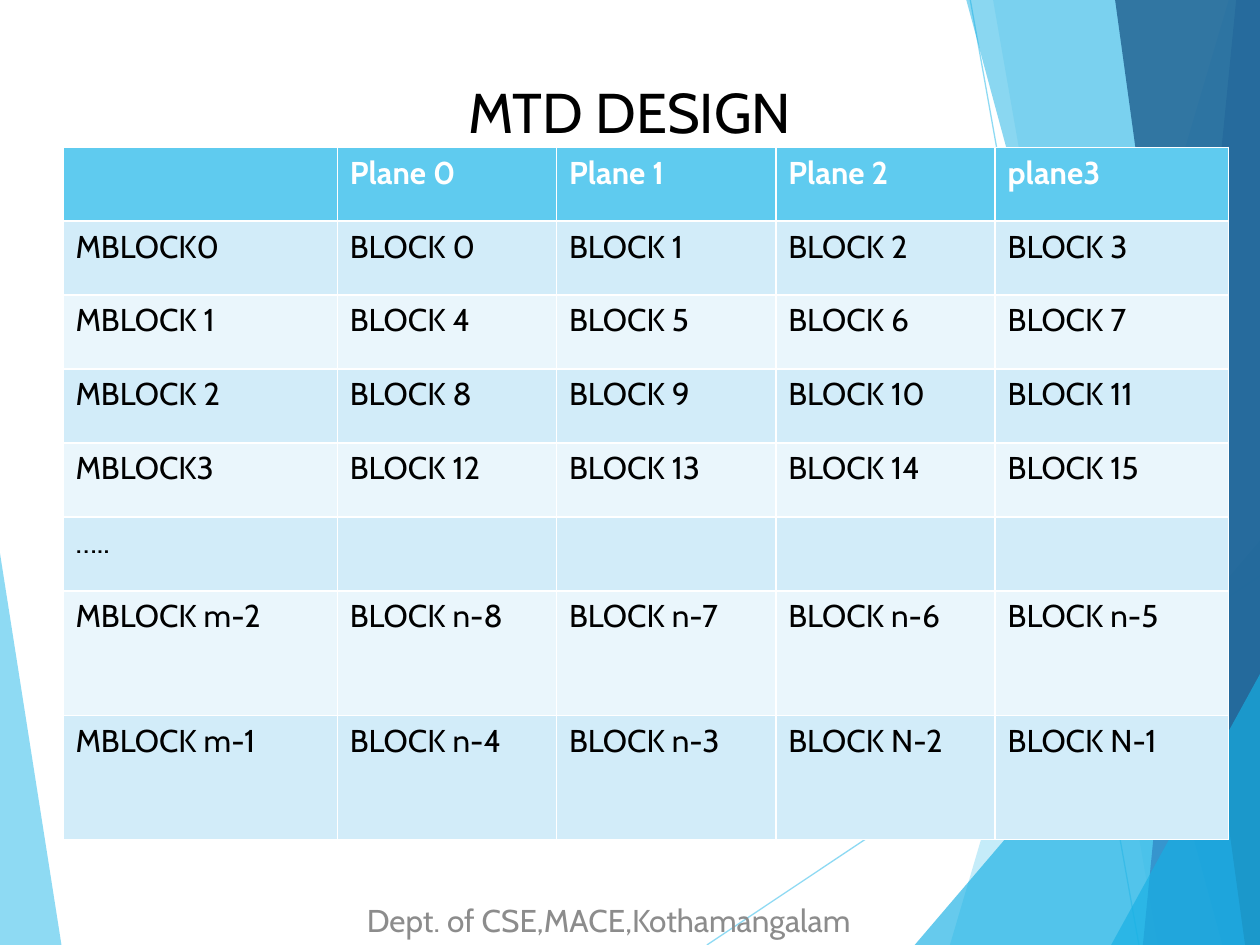
from lxml import etree
from pptx import Presentation
from pptx import util as u
from pptx.dml import color
from pptx.enum import shapes, text
from pptx.oxml import ns

FONT = "Cabin"
WIDTH, HEIGHT = 25.4, 19.05
COLOURS = {
    "sky": "5FCBEF", "cyan": "17B0E4", "blue": "2E83C3", "navy": "226292",
    "odd": "D2ECF9", "even": "EAF6FC", "white": "FFFFFF", "black": "000000", "grey": "8C8C8C",
}
COLUMN_WIDTHS = [5.53, 4.42, 4.42, 4.42, 4.71]
ROW_HEIGHTS = [1.49] * 6 + [2.51] * 2
ROWS = [
    ["", "Plane 0", "Plane 1", "Plane 2", "plane3"],
    ["MBLOCK0", "BLOCK 0", "BLOCK 1", "BLOCK 2", "BLOCK 3"],
    ["MBLOCK 1", "BLOCK 4", "BLOCK 5", "BLOCK 6", "BLOCK 7"],
    ["MBLOCK 2", "BLOCK 8", "BLOCK 9", "BLOCK 10", "BLOCK 11"],
    ["MBLOCK3", "BLOCK 12", "BLOCK 13", "BLOCK 14", "BLOCK 15"],
    ["…..", "", "", "", ""],
    ["MBLOCK m-2", "BLOCK n-8", "BLOCK n-7", "BLOCK n-6", "BLOCK n-5"],
    ["MBLOCK m-1", "BLOCK n-4", "BLOCK n-3", "BLOCK N-2", "BLOCK N-1"],
]


def rgb(name):
    return color.RGBColor.from_string(COLOURS[name])


def set_opacity(shape, percent):
    for element in shape._element.spPr.iter(ns.qn("a:srgbClr")):
        etree.SubElement(element, ns.qn("a:alpha"), val=str(percent * 1000))


def add_polygon(slide, points, fill, opacity):
    corners = [(u.Cm(x), u.Cm(y)) for x, y in points]
    builder = slide.shapes.build_freeform(*corners[0])
    builder.add_line_segments(corners[1:], close=True)
    shape = builder.convert_to_shape()
    shape.shadow.inherit = False
    shape.fill.solid()
    shape.fill.fore_color.rgb = rgb(fill)
    shape.line.fill.background()
    set_opacity(shape, opacity)


def add_panel(slide, top_x, bottom_x, fill, opacity):
    points = [(top_x, 0), (bottom_x, HEIGHT), (WIDTH, HEIGHT), (WIDTH, 0)]
    add_polygon(slide, points, fill, opacity)


def add_corner(slide, bottom_x, right_y):
    points = [(bottom_x, HEIGHT), (WIDTH, right_y), (WIDTH, HEIGHT)]
    add_polygon(slide, points, "cyan", 66)


def add_thin_line(slide, *ends):
    line = slide.shapes.add_connector(shapes.MSO_CONNECTOR.STRAIGHT, *map(u.Cm, ends))
    line.line.color.rgb = rgb("sky")
    line.line.width = u.Pt(0.75)
    set_opacity(line, 70)
    etree.SubElement(line._element.spPr, ns.qn("a:effectLst"))


def add_run(paragraph, content, size, colour, bold=False):
    run = paragraph.add_run()
    run.text = content
    run.font.name = FONT
    run.font.size = u.Pt(size)
    run.font.bold = bold
    run.font.color.rgb = rgb(colour)


def add_centred_text(slide, box, content, size, colour, anchor, spacing=1.0):
    frame = slide.shapes.add_textbox(*map(u.Cm, box)).text_frame
    frame.word_wrap = True
    frame.vertical_anchor = anchor
    paragraph = frame.paragraphs[0]
    paragraph.alignment = text.PP_ALIGN.CENTER
    paragraph.line_spacing = spacing
    add_run(paragraph, content, size, colour)


def add_block_table(slide):
    box = (1.27, 2.97, sum(COLUMN_WIDTHS), sum(ROW_HEIGHTS))
    table = slide.shapes.add_table(len(ROWS), len(COLUMN_WIDTHS), *map(u.Cm, box)).table
    for column, width in zip(table.columns, COLUMN_WIDTHS):
        column.width = u.Cm(width)
    for index, (row, height, labels) in enumerate(zip(table.rows, ROW_HEIGHTS, ROWS)):
        row.height = u.Cm(height)
        header = index == 0
        fill = "sky" if header else ("even", "odd")[index % 2]
        for cell, label in zip(row.cells, labels):
            cell.fill.solid()
            cell.fill.fore_color.rgb = rgb(fill)
            if label:
                add_run(cell.text_frame.paragraphs[0], label, 18,
                        "white" if header else "black", header)


def add_backdrop(slide):
    add_polygon(slide, [(0, 11.15), (1.24, HEIGHT), (0, HEIGHT)], "sky", 70)
    add_thin_line(slide, 14.25, HEIGHT, WIDTH, 11.61)
    add_thin_line(slide, 19.56, 0, 22.96, HEIGHT)
    add_panel(slide, 24.77, 19.15, "sky", 36)
    add_panel(slide, 20.02, 23.34, "sky", 20)
    add_corner(slide, 18.44, 10.9)
    add_panel(slide, 19.48, 24.64, "cyan", 50)
    add_panel(slide, 24.92, 23.04, "blue", 70)
    add_panel(slide, 22.48, 25.1, "navy", 82)
    add_corner(slide, 22.4, 13.59)


def main():
    """Build the MTD design slide and save it."""
    presentation = Presentation()
    presentation.slide_width, presentation.slide_height = u.Cm(WIDTH), u.Cm(HEIGHT)
    slide = presentation.slides.add_slide(presentation.slide_layouts[6])
    add_backdrop(slide)
    add_centred_text(slide, (0.85, 0.76, 23.7, 16.64), "MTD DESIGN", 32, "black",
                     text.MSO_ANCHOR.TOP, 1.5)
    add_centred_text(slide, (0.42, 18.03, 23.7, 1.02), "Dept. of CSE,MACE,Kothamangalam",
                     18, "grey", text.MSO_ANCHOR.MIDDLE)
    add_block_table(slide)
    presentation.save("out.pptx")


if __name__ == "__main__":
    main()
